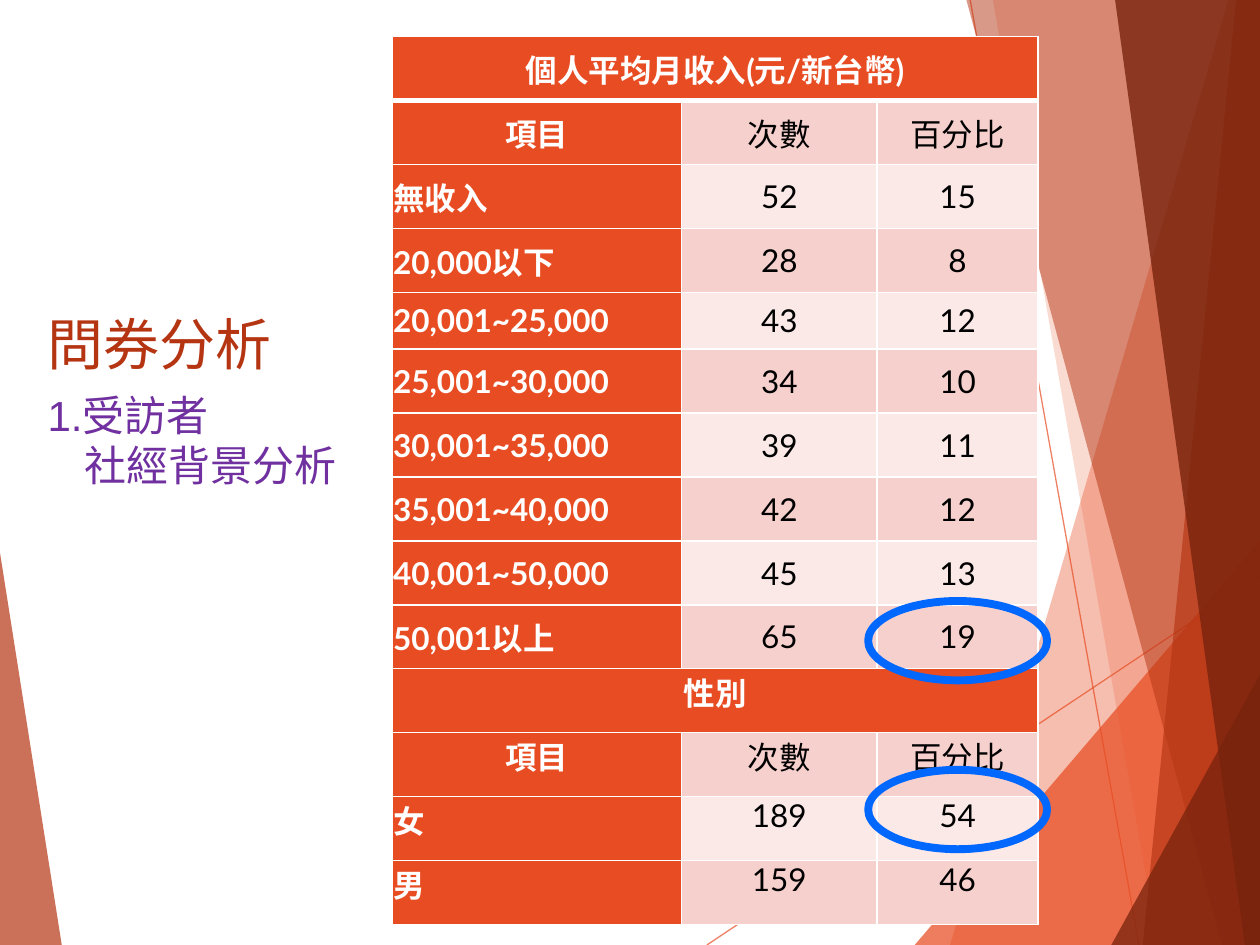
from pptx import Presentation
from pptx.dml.color import RGBColor
from pptx.enum.shapes import MSO_CONNECTOR, MSO_SHAPE
from pptx.enum.text import MSO_ANCHOR, MSO_AUTO_SIZE, PP_ALIGN
from pptx.oxml.ns import qn
from pptx.util import Inches, Pt
from lxml import etree

STRAIGHT, OVAL = MSO_CONNECTOR.STRAIGHT, MSO_SHAPE.OVAL
TOP, MIDDLE, BOTTOM = MSO_ANCHOR.TOP, MSO_ANCHOR.MIDDLE, MSO_ANCHOR.BOTTOM
LEFT, CENTER = PP_ALIGN.LEFT, PP_ALIGN.CENTER
NO_FIT = MSO_AUTO_SIZE.NONE

THEME = {
    "orange": "E84C22", "rust": "B53513", "brown": "78230D",
    "band_dark": "F6D0CD", "band_light": "FBE9E8",
    "white": "FFFFFF", "black": "000000", "purple": "7030A0", "ring": "0067FF",
    "title_size": 32, "topic_size": 24, "table_size": 18,
    "font": "Lato", "topic_font": "Arial",
}

prs = Presentation()
prs.slide_width, prs.slide_height = Inches(10), Inches(7.5)
slide = prs.slides.add_slide(prs.slide_layouts[5])
shapes = slide.shapes


def at(*shares):
    """Turn x, y pairs in percent of the slide into lengths."""
    sides = (prs.slide_width, prs.slide_height)
    return [round(share * sides[i % 2] / 100) for i, share in enumerate(shares)]


def paint(fill, color, opacity=100):
    """Fill with a theme colour, see-through below 100 percent."""
    fill.solid()
    fill.fore_color.rgb = RGBColor.from_string(THEME[color])
    if opacity < 100:
        for rgb in fill._xPr.iter(qn("a:srgbClr")):
            etree.SubElement(rgb, qn("a:alpha"), val=str(opacity * 1000))


# Thin lines behind the facets
for ends in [(56.1, 100, 100, 61), (77, 0, 90.4, 100)]:
    ray = shapes.add_connector(STRAIGHT, *at(*ends))
    ray.line.width = Pt(0.75)
    paint(ray.line.fill, "orange", 70)
    etree.SubElement(ray._element.spPr, qn("a:effectLst"))

# Facets at the right and left edges, back to front
facets = [
    ("orange", 36, [(97.5, 0), (75.4, 100), (100, 100), (100, 0)]),
    ("orange", 20, [(78.8, 0), (91.9, 100), (100, 100), (100, 0)]),
    ("orange", 72, [(72.6, 100), (100, 57.2), (100, 100)]),
    ("rust", 50, [(76.7, 0), (97, 100), (100, 100), (100, 0)]),
    ("rust", 66, [(98.1, 0), (90.7, 100), (100, 100), (100, 0)]),
    ("brown", 80, [(88.5, 0), (98.8, 100), (100, 100), (100, 0)]),
    ("brown", 76, [(88.2, 100), (100, 71.4), (100, 100)]),
    ("rust", 70, [(0, 58.5), (4.9, 100), (0, 100)]),
]
for color, opacity, corners in facets:
    outline = shapes.build_freeform(*at(*corners[0]))
    outline.add_line_segments([at(*corner) for corner in corners[1:]])
    facet = outline.convert_to_shape()
    facet.shadow.inherit = False
    facet.line.fill.background()
    paint(facet.fill, color, opacity)

# Title and topic share a column at the left
title = shapes.title
title.left, title.top, title.width, title.height = at(2.8, 21.87, 30.5, 18.67)
topic = shapes.add_textbox(*at(2.8, 40.53, 30.5, 37.73))
headings = [
    (title, "問券分析", BOTTOM, "title_size", "font", "rust"),
    (topic, "1.受訪者\v社經背景分析", TOP, "topic_size", "topic_font", "purple"),
]
for box, words, anchor, size, font, color in headings:
    frame = box.text_frame
    frame.word_wrap, frame.auto_size, frame.vertical_anchor = True, NO_FIT, anchor
    line = frame.paragraphs[0]
    line.text, line.alignment = words, LEFT
    for run in line.runs:
        run.font.size, run.font.name = Pt(THEME[size]), THEME[font]
        run.font.color.rgb = RGBColor.from_string(THEME[color])

# The second line of the topic hangs under the words after the number
topic_line = topic.text_frame.paragraphs[0]
topic_line.space_before = Pt(10)
hang = at(2.9)[0]
topic_line._p.get_or_add_pPr().set("marL", str(hang))
topic_line._p.get_or_add_pPr().set("indent", str(-hang))

# Survey table: income, then gender
COLUMN_NAMES = ("項目", "次數", "百分比")
rows = [
    ("個人平均月收入(元/新台幣)",),
    COLUMN_NAMES,
    ("無收入", 52, 15),
    ("20,000以下", 28, 8),
    ("20,001~25,000", 43, 12),
    ("25,001~30,000", 34, 10),
    ("30,001~35,000", 39, 11),
    ("35,001~40,000", 42, 12),
    ("40,001~50,000", 45, 13),
    ("50,001以上", 65, 19),
    ("性別",),
    COLUMN_NAMES,
    ("女", 189, 54),
    ("男", 159, 46),
]
GENDER_START, SHORT_ROW = 10, 4
table_box = at(31.1, 3.87, 51.3, 94)
survey = shapes.add_table(len(rows), len(COLUMN_NAMES), *table_box).table
survey.first_row = survey.horz_banding = False
for column, share in zip(survey.columns, (23, 15.5, 12.8)):
    column.width = at(share)[0]
short_height = at(0, 6)[1]
row_height = (table_box[3] - short_height) // (len(rows) - 1)

cell_format = {"margin_left": Inches(0.01), "margin_right": Inches(0.01),
               "margin_top": 0, "margin_bottom": 0}
for r, values in enumerate(rows):
    survey.rows[r].height = short_height if r == SHORT_ROW else row_height
    is_heading = len(values) == 1
    band = "band_dark" if r % 2 else "band_light"
    if r > GENDER_START:
        band = "band_dark" if (r - GENDER_START) % 2 else "band_light"
    for c in range(len(COLUMN_NAMES)):
        cell = survey.cell(r, c)
        for name, value in cell_format.items():
            setattr(cell, name, value)
        cell.vertical_anchor = MIDDLE if r < GENDER_START else TOP

        # White borders, heavier between the first two rows
        for side in "LRTB":
            heavy = (r, side) in [(0, "B"), (1, "T")]
            border = etree.SubElement(cell._tc.get_or_add_tcPr(), qn(f"a:ln{side}"),
                                      w=str(Pt(3 if heavy else 1)))
            solid = etree.SubElement(border, qn("a:solidFill"))
            etree.SubElement(solid, qn("a:srgbClr"), val=THEME["white"])
        is_label = is_heading or c == 0
        paint(cell.fill, "orange" if is_label else band)

        if c < len(values):
            entry = cell.text_frame.paragraphs[0]
            is_category = c == 0 and not is_heading and values is not COLUMN_NAMES
            entry.alignment = LEFT if is_category else CENTER
            run = entry.add_run()
            run.text = str(values[c])
            run.font.size, run.font.name = Pt(THEME["table_size"]), THEME["font"]
            run.font.bold = is_label
            ink = THEME["white" if is_label else "black"]
            run.font.color.rgb = RGBColor.from_string(ink)
    if is_heading:
        survey.cell(r, 0).merge(survey.cell(r, len(COLUMN_NAMES) - 1))

# Rings around the largest shares
for ring_top in (63.6, 81.47):
    ring = shapes.add_shape(OVAL, *at(68.9, ring_top, 14.2, 8.4))
    ring.shadow.inherit = False
    ring.fill.background()
    ring.line.width = Pt(4.5)
    paint(ring.line.fill, "ring")

prs.save("out.pptx")
